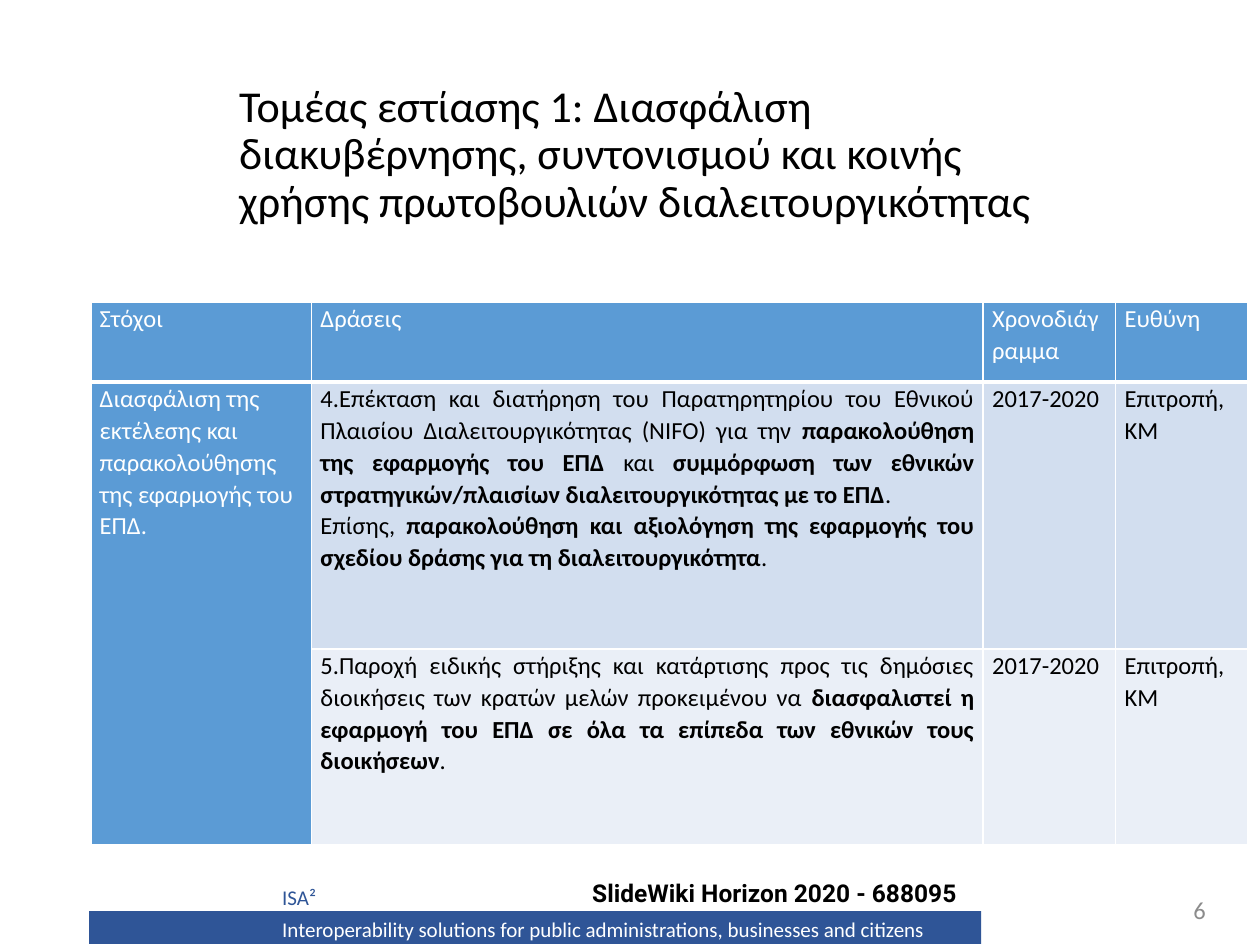
import pptx
import pptx.util
import pptx.dml.color
import pptx.enum.shapes
import pptx.enum.text
import pptx.oxml
import pptx.oxml.ns
from pptx.util import Cm

ALIGN = pptx.enum.text.PP_ALIGN
ANCHOR = pptx.enum.text.MSO_ANCHOR
WHITE, BLACK, NAVY, BLUE, GREY = "FFFFFF", "000000", "2F5597", "5B9BD5", "8C8C8C"
PALE_ROWS = ["D2DEEF", "EAEFF7"]
BORDERS = {"lnL": 1, "lnR": 1, "lnT": 1, "lnB": 1}

TITLE = ("Τομέας εστίασης 1: Διασφάλιση διακυβέρνησης, συντονισμού και κοινής "
         "χρήσης πρωτοβουλιών διαλειτουργικότητας")
HEADINGS = ["Στόχοι", "Δράσεις", "Χρονοδιάγραμμα", "Ευθύνη"]
GOAL = "Διασφάλιση της εκτέλεσης και παρακολούθησης της εφαρμογής του ΕΠΔ."
ACTIONS = [
    ["4.Επέκταση και διατήρηση του Παρατηρητηρίου του Εθνικού Πλαισίου "
     "Διαλειτουργικότητας (NIFO) για την **παρακολούθηση της εφαρμογής του ΕΠΔ **και "
     "**συμμόρφωση των εθνικών στρατηγικών/πλαισίων διαλειτουργικότητας με το ΕΠΔ**.",
     "Επίσης, **παρακολούθηση και αξιολόγηση της εφαρμογής του σχεδίου δράσης για τη "
     "διαλειτουργικότητα**."],
    ["5.Παροχή ειδικής στήριξης και κατάρτισης προς τις δημόσιες διοικήσεις των κρατών "
     "μελών προκειμένου να **διασφαλιστεί η εφαρμογή του ΕΠΔ σε όλα τα επίπεδα των "
     "εθνικών τους διοικήσεων**."],
]
PERIOD = "2017-2020"
OWNER = "Επιτροπή, ΚΜ"


def colour(value):
    return pptx.dml.color.RGBColor.from_string(value)


def set_values(target, values):
    for name, value in values.items():
        setattr(target, name, value)


def paint(fill, value):
    fill.solid()
    fill.fore_color.rgb = colour(value)


def write_para(para, text, size, ink, layout, face="Calibri", bold=False, indent=0):
    if indent:
        para._p.get_or_add_pPr().set("marL", str(Cm(indent)))
    set_values(para, layout)
    for index, part in enumerate(text.split("**")):
        span = para.add_run()
        span.text = part
        set_values(span.font, {"name": face, "size": pptx.util.Pt(size),
                               "bold": bold or index % 2 == 1})
        span.font.color.rgb = colour(ink)


def write_lines(frame, lines, size, ink, layout):
    for index, line in enumerate(lines):
        para = frame.paragraphs[0] if index == 0 else frame.add_paragraph()
        write_para(para, line, size, ink, layout)


def add_text_box(page, left, top, width, height, anchor=ANCHOR.TOP):
    box = page.shapes.add_textbox(Cm(left), Cm(top), Cm(width), Cm(height))
    set_values(box.text_frame, {"word_wrap": True, "vertical_anchor": anchor})
    return box.text_frame


def add_title(page, left, top, width, height):
    frame = add_text_box(page, left, top, width, height, ANCHOR.MIDDLE)
    write_lines(frame, [TITLE], 25.2, BLACK, {"line_spacing": 0.9})


def add_footer(page, left, top, width, height):
    band = page.shapes.add_shape(pptx.enum.shapes.MSO_SHAPE.RECTANGLE,
                                 Cm(left + 0.17), Cm(top + 0.79), Cm(17.98), Cm(0.66))
    band.shadow.inherit = False
    paint(band.fill, NAVY)
    band.line.fill.background()

    project = add_text_box(page, left + 10.06, top, 9.25, 0.86)
    write_para(project.paragraphs[0], "SlideWiki Horizon 2020 -\u00a0688095", 14, BLACK,
               {}, face="Roboto", bold=True)

    programme = add_text_box(page, left, top, width, height)
    spacing = {"line_spacing": pptx.util.Pt(18)}
    write_para(programme.paragraphs[0], "ISA²", 12, NAVY, spacing, indent=3.81)
    write_para(programme.add_paragraph(),
               "Interoperability solutions for public administrations, businesses and citizens",
               12, WHITE, spacing, indent=3.81)


def add_page_number(page, left, top, width, height):
    frame = add_text_box(page, left, top, width, height, ANCHOR.MIDDLE)
    write_lines(frame, ["6"], 14, GREY, {"alignment": ALIGN.RIGHT})


def add_borders(cell, widths):
    properties = cell._tc.get_or_add_tcPr()
    for side, points in widths.items():
        properties.append(pptx.oxml.parse_xml(
            f'<a:{side} {pptx.oxml.ns.nsdecls("a")} w="{pptx.util.Pt(points)}">'
            f'<a:solidFill><a:srgbClr val="{WHITE}"/></a:solidFill></a:{side}>'))


def fill_cell(cell, lines, ink, back, widths, alignment=ALIGN.JUSTIFY):
    set_values(cell, {"margin_left": Cm(0.18), "margin_right": Cm(0.18),
                      "margin_top": 0, "margin_bottom": 0})
    add_borders(cell, widths)
    paint(cell.fill, back)
    write_lines(cell.text_frame, lines, 14, ink,
                {"alignment": alignment, "line_spacing": 1.07})


def add_action_table(page, left, top, width, height):
    table = page.shapes.add_table(3, 4, Cm(left), Cm(top), Cm(width), Cm(height)).table
    set_values(table, {"first_row": False, "horz_banding": False})
    for column, size in zip(table.columns, [4.45, 13.54, 2.67, 2.67]):
        column.width = Cm(size)
    for row, size in zip(table.rows, [1.6, 5.38, 3.94]):
        row.height = Cm(size)

    for index, heading in enumerate(HEADINGS):
        fill_cell(table.cell(0, index), [heading], WHITE, BLUE, {**BORDERS, "lnB": 3})

    table.cell(1, 0).merge(table.cell(2, 0))
    fill_cell(table.cell(1, 0), [GOAL], WHITE, BLUE, BORDERS, ALIGN.LEFT)
    fill_cell(table.cell(2, 0), [], WHITE, BLUE, BORDERS)
    for row, (action, back) in enumerate(zip(ACTIONS, PALE_ROWS), start=1):
        for column, lines in enumerate([action, [PERIOD], [OWNER]], start=1):
            fill_cell(table.cell(row, column), lines, BLACK, back, BORDERS)


def main():
    deck = pptx.Presentation()
    set_values(deck, {"slide_width": Cm(25.4), "slide_height": Cm(19.05)})
    page = deck.slides.add_slide(deck.slide_layouts[6])
    add_footer(page, 1.63, 17.58, 20.12, 1.55)
    add_title(page, 4.57, 1.75, 16.76, 2.77)
    add_page_number(page, 23.14, 17.83, 1.42, 1.02)
    add_action_table(page, 1.83, 6.1, 23.33, 10.92)
    deck.save("out.pptx")


if __name__ == "__main__":
    main()
